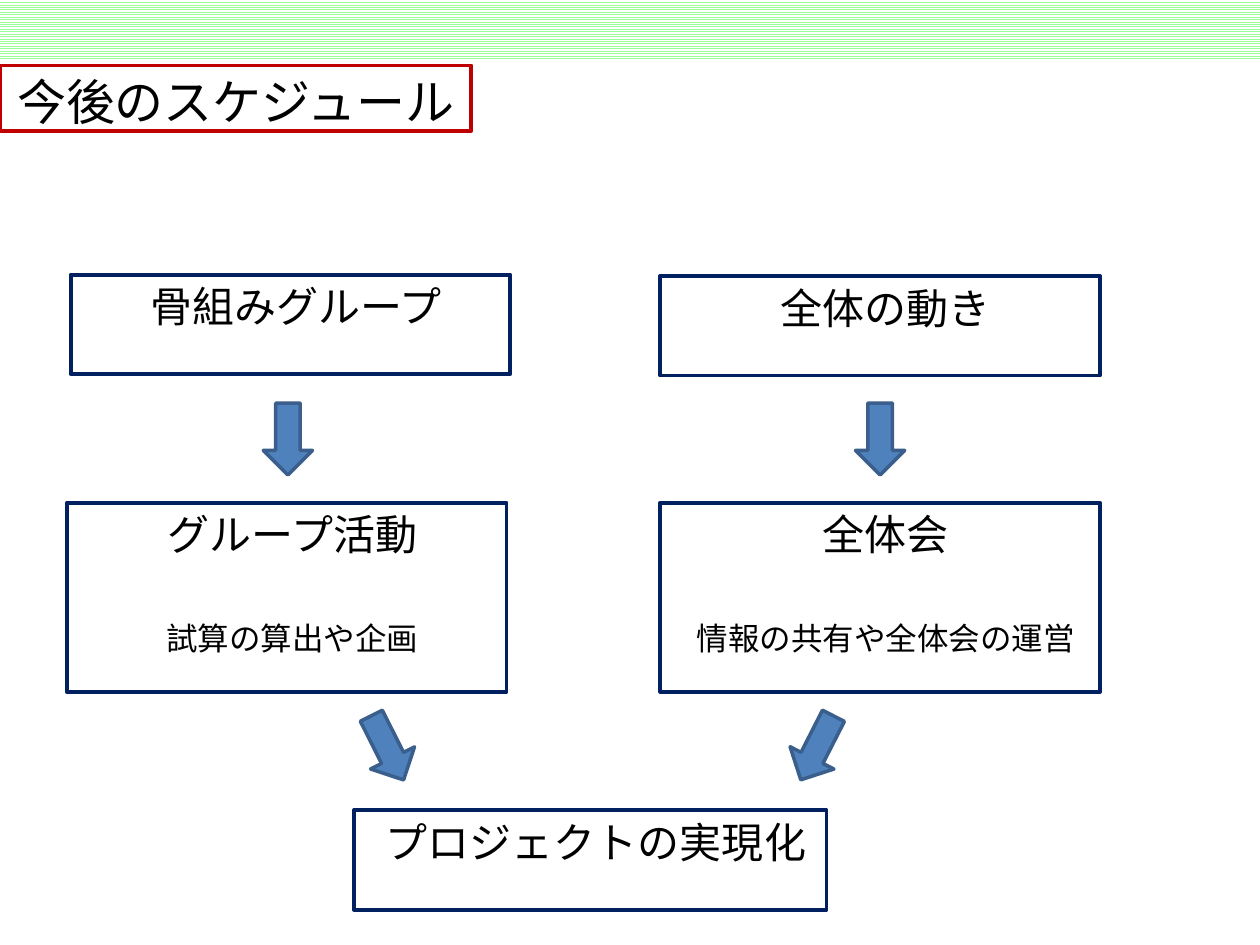
from pptx import Presentation
from pptx.dml.color import RGBColor
from pptx.enum.dml import MSO_PATTERN
from pptx.enum.shapes import MSO_SHAPE
from pptx.enum.text import MSO_ANCHOR, PP_ALIGN
from pptx.util import Inches, Pt

NAVY, RED, BLACK = "002060", "C00000", "000000"
LEFT, RIGHT = 0.53, 5.24          # left edges of the two columns
HEAD, DETAIL, GOAL = 2.19, 3.99, 6.43  # tops of the three rows
BOX_WIDTH, BOX_HEIGHT, DETAIL_HEIGHT = 3.49, 0.79, 1.5
ARROW_WIDTH, ARROW_HEIGHT = 0.57, 0.39


def color(hex_string):
    return RGBColor.from_string(hex_string)


def add_outlined(kind, left, top, width, height, line_color, line_width):
    """Add a shape without fill or shadow, its lengths given in inches."""
    shape = slide.shapes.add_shape(
        kind, Inches(left), Inches(top), Inches(width), Inches(height))
    shape.shadow.inherit = False
    shape.fill.background()
    shape.line.color.rgb = color(line_color)
    shape.line.width = Pt(line_width)
    return shape


prs = Presentation()
prs.slide_width, prs.slide_height = Inches(10), Inches(7.5)
slide = prs.slides.add_slide(prs.slide_layouts[6])

stripes = add_outlined(MSO_SHAPE.RECTANGLE, 0, 0, 10, 0.47, NAVY, 1)
stripes.line.fill.background()
stripes.fill.patterned()
stripes.fill.pattern = MSO_PATTERN.LIGHT_HORIZONTAL
stripes.fill.fore_color.rgb = color("99FF99")
stripes.fill.back_color.rgb = color("FFFFFF")

# left, top, width, height, outline, heading size, left indent, lines
boxes = [
    (0, 0.52, 3.74, 0.52, RED, 28, 0, ["今後のスケジュール"]),
    (LEFT + 0.03, HEAD - 0.01, BOX_WIDTH, BOX_HEIGHT, NAVY, 24, 0.09,
     ["骨組みグループ"]),
    (RIGHT, HEAD, BOX_WIDTH, BOX_HEIGHT, NAVY, 24, 0.09, ["全体の動き"]),
    (LEFT, DETAIL, BOX_WIDTH, DETAIL_HEIGHT, NAVY, 24, 0.09,
     ["グループ活動", "試算の算出や企画"]),
    (RIGHT, DETAIL, BOX_WIDTH, DETAIL_HEIGHT, NAVY, 24, 0.09,
     ["全体会", "情報の共有や全体会の運営"]),
    (2.81, GOAL, 3.75, BOX_HEIGHT, NAVY, 24, 0.09, ["プロジェクトの実現化"]),
]
for left, top, width, height, outline, heading_size, indent, lines in boxes:
    box = add_outlined(
        MSO_SHAPE.RECTANGLE, left, top, width, height, outline, 2.25)
    frame = box.text_frame
    frame.text = "\n".join(lines)
    frame.word_wrap = True
    frame.vertical_anchor = MSO_ANCHOR.TOP
    for row, paragraph in enumerate(frame.paragraphs):
        paragraph.alignment = PP_ALIGN.CENTER
        paragraph.space_before = Pt(34 if row else 6)
        paragraph._p.get_or_add_pPr().set("marL", str(Inches(indent)))
        font = paragraph.runs[0].font
        font.name = "Calibri"
        font.size = Pt(18 if row else heading_size)
        font.color.rgb = color(BLACK)

for left, top, angle in [(2, 3.29, 90), (6.7, 3.29, 90),
                         (2.79, 5.74, 63.3), (6.2, 5.74, 117)]:
    arrow = add_outlined(MSO_SHAPE.RIGHT_ARROW, left, top,
                         ARROW_WIDTH, ARROW_HEIGHT, "3A5F8C", 2)
    arrow.fill.solid()
    arrow.fill.fore_color.rgb = color("4F81BD")
    arrow.rotation = angle

prs.save("out.pptx")
